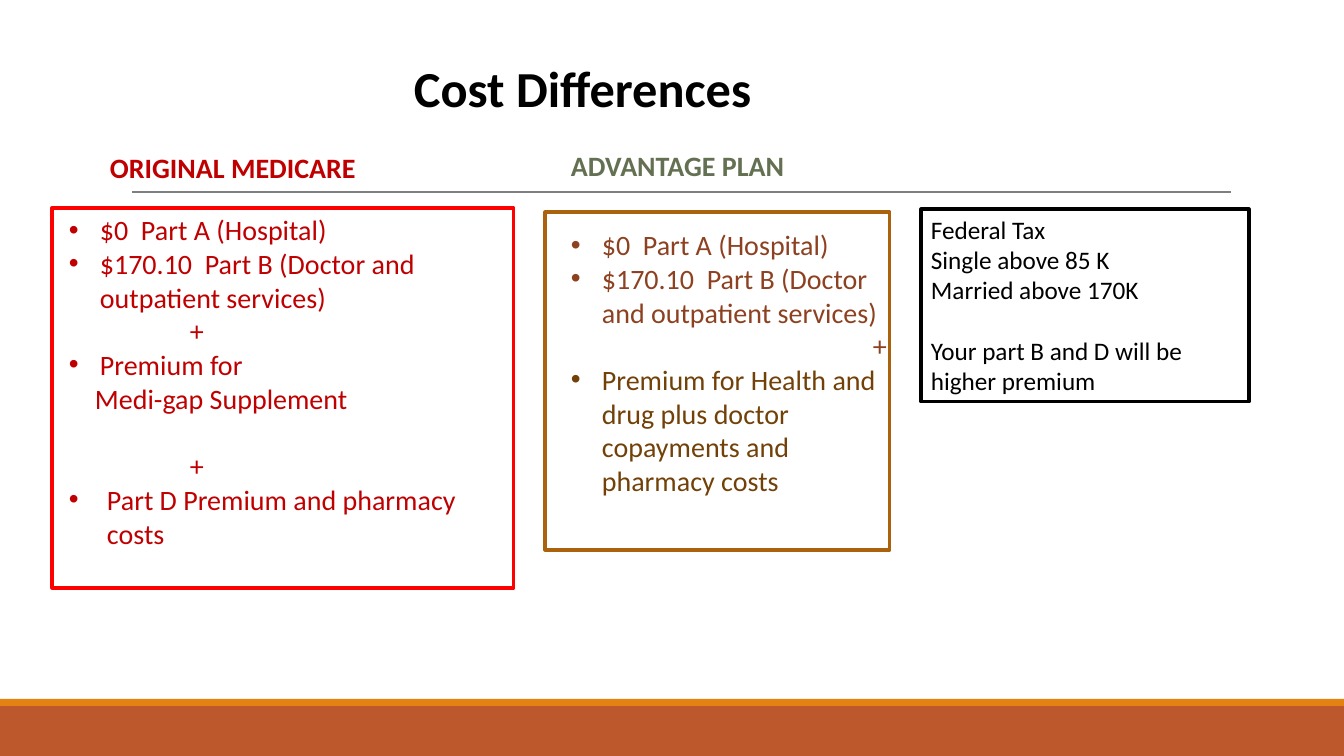
from pptx import Presentation, util as u
from pptx.dml.color import RGBColor
from pptx.enum import shapes, text
from pptx.oxml import parse_xml
from pptx.oxml.ns import nsdecls, qn
from lxml import etree

# Content. Lines: (text, left indent in px, options)
BULLET = {"bullet": True}
TITLE = [("Cost Differences", 0, {})]
ORIGINAL_HEADING = [("ORIGINAL MEDICARE", 0, {})]
ADVANTAGE_HEADING = [("ADVANTAGE PLAN", 0, {})]
ORIGINAL_COSTS = [
    ("$0  Part A (Hospital)", 31, BULLET),
    ("$170.10  Part B (Doctor and outpatient services)", 31, BULLET),
    ("+", 121, {}),
    ("Premium for", 31, BULLET),
    ("Medi-gap Supplement", 26, {}),
    ("+", 121, {"gap": True}),
    ("Part D Premium and pharmacy costs", 38, BULLET),
]
ADVANTAGE_COSTS = [
    ("$0  Part A (Hospital)", 31, BULLET),
    ("$170.10  Part B (Doctor and outpatient services)", 31, BULLET),
    ("+", 302, {}),
    ("Premium for Health and drug plus doctor copayments and pharmacy costs", 31,
     {"bullet": True, "color": "premium"}),
]
FEDERAL_TAX = [
    ("Federal Tax", 0, {}),
    ("Single above 85 K", 0, {}),
    ("Married above 170K", 0, {}),
    ("Your part B and D will be higher premium", 0, {"gap": True}),
]

THEME = {
    "font": "Calibri",
    "sizes": {"title": 36, "body": 20, "note": 18},
    "colors": {
        "black": "000000", "original": "C00000", "original_frame": "FF0000",
        "advantage": "8D4120", "advantage_frame": "AB620D", "premium": "724108",
        "advantage_heading": "637052", "rule": "7F7F7F",
        "footer": "BD582C", "strip": "E48312",
    },
}

# Geometry in px: left, top, width, height
WIDTH, HEIGHT = 1344, 756
FOOTER_TOP, STRIP_HEIGHT = 706, 7
RULE_LEFT, RULE_RIGHT, RULE_Y = 132, 1231, 192
FRAMES = [
    ((52, 208, 462, 380), "original_frame"),
    ((545, 212, 345, 338), "advantage_frame"),
    ((921, 209, 328, 193), "black"),
]
TEXTS = [
    (TITLE, (404, 43, 533, 80),
     dict(size="title", color="black", bold=True, anchor="BOTTOM", spacing=0.85)),
    (ORIGINAL_HEADING, (100, 144, 462, 50),
     dict(color="original", bold=True, anchor="MIDDLE", spacing=0.9)),
    (ADVANTAGE_HEADING, (561, 142, 462, 50),
     dict(color="advantage_heading", bold=True, anchor="MIDDLE", spacing=0.9)),
    (ORIGINAL_COSTS, (59, 208, 455, 380), dict(color="original")),
    (ADVANTAGE_COSTS, (561, 223, 345, 281), dict(color="advantage")),
    (FEDERAL_TAX, (921, 209, 328, 193), dict(size="note", color="black")),
]
LINE_HEIGHT = 1.22


def px(value):
    return u.Emu(round(value * 914400 / 100.8))


def color_of(name):
    return RGBColor.from_string(THEME["colors"][name])


def add_box(slide, box, fill=None, line=None):
    shape = slide.shapes.add_shape(shapes.MSO_SHAPE.RECTANGLE, *map(px, box))
    shape.shadow.inherit = False
    if fill:
        shape.fill.solid()
        shape.fill.fore_color.rgb = color_of(fill)
    else:
        shape.fill.background()
    if line:
        shape.line.color.rgb = color_of(line)
        shape.line.width = u.Pt(2.25)
    else:
        shape.line.fill.background()


def add_text(slide, lines, box, size="body", color="black", bold=False,
             anchor="TOP", spacing=1.0):
    frame = slide.shapes.add_textbox(*map(px, box)).text_frame
    frame.word_wrap = True
    frame.vertical_anchor = text.MSO_ANCHOR[anchor]
    points = THEME["sizes"][size]
    for index, (words, indent, options) in enumerate(lines):
        paragraph = frame.paragraphs[0] if index == 0 else frame.add_paragraph()
        paragraph.line_spacing = spacing
        if options.get("gap"):
            paragraph.space_before = u.Pt(round(points * LINE_HEIGHT, 1))
        run = paragraph.add_run()
        run.text = words
        run.font.name = THEME["font"]
        run.font.size = u.Pt(points)
        run.font.bold = bold
        run.font.color.rgb = color_of(options.get("color", color))
        properties = paragraph._p.get_or_add_pPr()
        properties.set("marL", str(px(indent)))
        if options.get("bullet"):
            properties.set("indent", str(-px(indent)))
            properties.append(parse_xml(f'<a:buFont {nsdecls("a")} typeface="Arial"/>'))
            properties.append(parse_xml(f'<a:buChar {nsdecls("a")} char="•"/>'))


def add_rule(slide):
    rule = slide.shapes.add_connector(
        shapes.MSO_CONNECTOR.STRAIGHT, px(RULE_LEFT), px(RULE_Y), px(RULE_RIGHT), px(RULE_Y))
    rule.line.color.rgb = color_of("rule")
    rule.line.width = u.Pt(0.75)
    etree.SubElement(rule._element.spPr, qn("a:effectLst"))


def main():
    presentation = Presentation()
    presentation.slide_width, presentation.slide_height = px(WIDTH), px(HEIGHT)
    slide = presentation.slides.add_slide(presentation.slide_layouts[6])

    # Footer bands and heading rule
    add_box(slide, (0, FOOTER_TOP, WIDTH, HEIGHT - FOOTER_TOP), fill="footer")
    add_box(slide, (0, FOOTER_TOP - STRIP_HEIGHT, WIDTH, STRIP_HEIGHT), fill="strip")
    add_rule(slide)

    # Column frames, then all wording
    for box, line in FRAMES:
        add_box(slide, box, line=line)
    for lines, box, style in TEXTS:
        add_text(slide, lines, box, **style)

    presentation.save("out.pptx")


if __name__ == "__main__":
    main()
